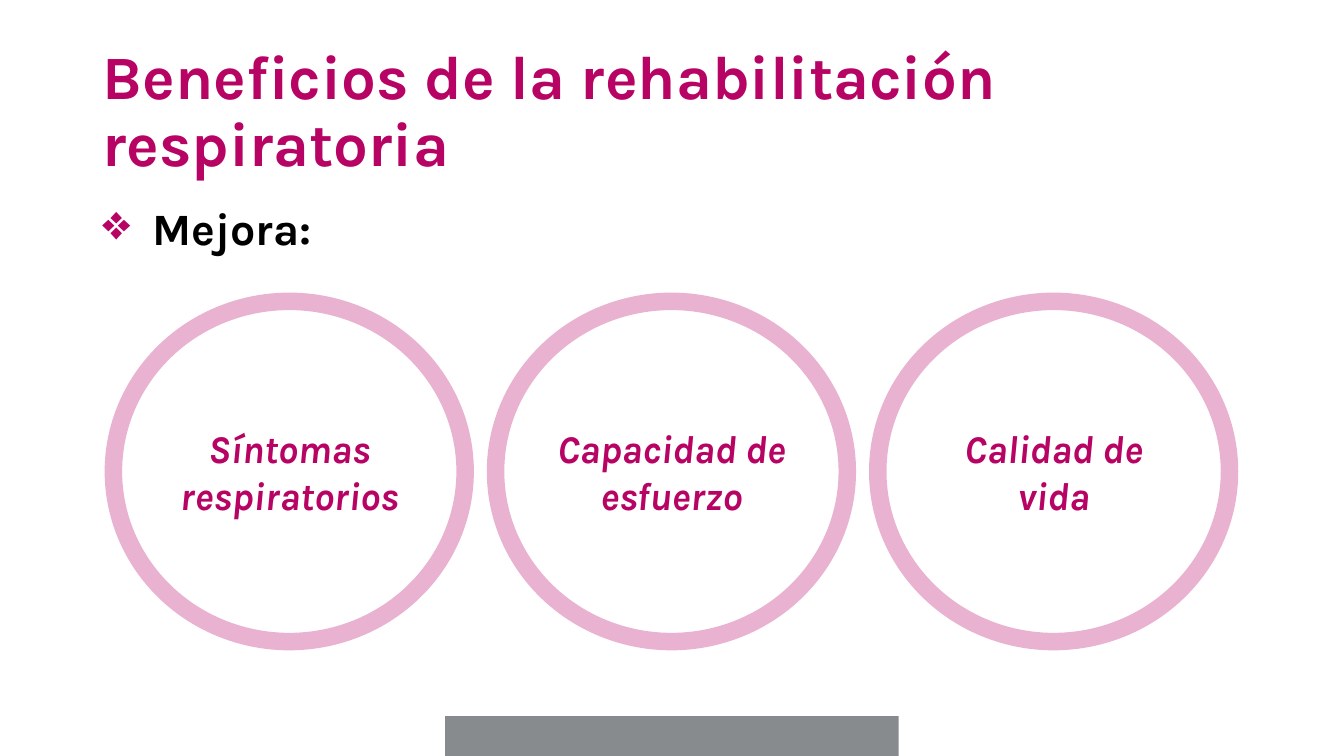
from dataclasses import dataclass

from lxml import etree
from pptx import Presentation
from pptx import util as u
from pptx.dml.color import RGBColor
from pptx.enum import shapes, text
from pptx.oxml import parse_xml
from pptx.oxml.ns import nsdecls, qn

PX = 9525  # EMU per px, 1280 x 720 px slide
FONT = "Karla"
MAGENTA, BLACK, GREY = "B70364", "000000", "888B8D"


@dataclass(frozen=True)
class Box:
    left: int
    top: int
    width: int
    height: int

    def emu(self) -> tuple[int, int, int, int]:
        return self.left * PX, self.top * PX, self.width * PX, self.height * PX


@dataclass(frozen=True)
class Benefit:
    label: str
    box: Box


TITLE = Box(88, 38, 1104, 139)
HEADING = Box(88, 192, 544, 457)
FOOTER_BAR = Box(424, 682, 432, 38)
RING_LEFT, RING_TOP, RING_WIDTH, RING_HEIGHT, RING_PITCH = 108, 287, 335, 324, 364
LABELS = ("Síntomas respiratorios", "Capacidad de esfuerzo", "Calidad de vida")
BENEFITS = [
    Benefit(label, Box(RING_LEFT + i * RING_PITCH, RING_TOP, RING_WIDTH, RING_HEIGHT))
    for i, label in enumerate(LABELS)
]


def rgb(color: str) -> RGBColor:
    return RGBColor.from_string(color)


def add_bullet(p, char: str, color: str, size: int, indent: int) -> None:
    """Give the paragraph a hanging bullet; size is in percent, indent in px."""
    pPr = p._p.get_or_add_pPr()
    pPr.set("marL", str(indent * PX))
    pPr.set("indent", str(-indent * PX))
    ns = nsdecls("a")
    for xml in (
        f'<a:buClr {ns}><a:srgbClr val="{color}"/></a:buClr>',
        f'<a:buSzPct {ns} val="{size * 1000}"/>',
        f'<a:buChar {ns} char="{char}"/>',
    ):
        pPr.append(parse_xml(xml))


def write(sp, content: str, *, size: int, color: str, italic: bool = False,
          align=text.PP_ALIGN.LEFT, anchor=text.MSO_ANCHOR.TOP,
          spacing: float = 1.0, bullet: str = "") -> None:
    tf = sp.text_frame
    tf.word_wrap = True
    tf.auto_size = text.MSO_AUTO_SIZE.NONE
    tf.vertical_anchor = anchor
    p = tf.paragraphs[0]
    p.alignment = align
    p.line_spacing = spacing
    p.space_before = u.Pt(0)
    if bullet:
        add_bullet(p, bullet, MAGENTA, 110, 48)
    r = p.add_run()
    r.text = content
    r.font.name = FONT
    r.font.size = u.Pt(size)
    r.font.bold = True
    r.font.italic = italic
    r.font.color.rgb = rgb(color)


def add_footer_bar(slide) -> None:
    sp = slide.shapes.add_shape(shapes.MSO_SHAPE.RECTANGLE, *FOOTER_BAR.emu())
    sp.shadow.inherit = False
    sp.fill.solid()
    sp.fill.fore_color.rgb = rgb(GREY)
    sp.line.fill.background()


def add_ring(slide, benefit: Benefit) -> None:
    sp = slide.shapes.add_shape(shapes.MSO_SHAPE.OVAL, *benefit.box.emu())
    sp.shadow.inherit = False
    sp.fill.background()
    sp.line.width = u.Pt(12.5)
    sp.line.color.rgb = rgb(MAGENTA)
    line_color = sp.line._ln.find(".//" + qn("a:srgbClr"))
    etree.SubElement(line_color, qn("a:alpha")).set("val", "30000")
    sp.text_frame.margin_left = sp.text_frame.margin_right = 6 * PX
    write(sp, benefit.label, size=28, color=MAGENTA, italic=True,
          align=text.PP_ALIGN.CENTER, anchor=text.MSO_ANCHOR.MIDDLE)


def main() -> None:
    prs = Presentation()
    prs.slide_width, prs.slide_height = 1280 * PX, 720 * PX
    slide = prs.slides.add_slide(prs.slide_layouts.get_by_name("Title Only"))
    add_footer_bar(slide)

    title = slide.shapes.title
    title.left, title.top, title.width, title.height = TITLE.emu()
    write(title, "Beneficios de la rehabilitación respiratoria", size=44,
          color=MAGENTA, anchor=text.MSO_ANCHOR.MIDDLE, spacing=0.9)

    heading = slide.shapes.add_textbox(*HEADING.emu())
    write(heading, "Mejora:", size=32, color=BLACK, spacing=0.9, bullet="❖")

    for benefit in BENEFITS:
        add_ring(slide, benefit)
    prs.save("out.pptx")


if __name__ == "__main__":
    main()
